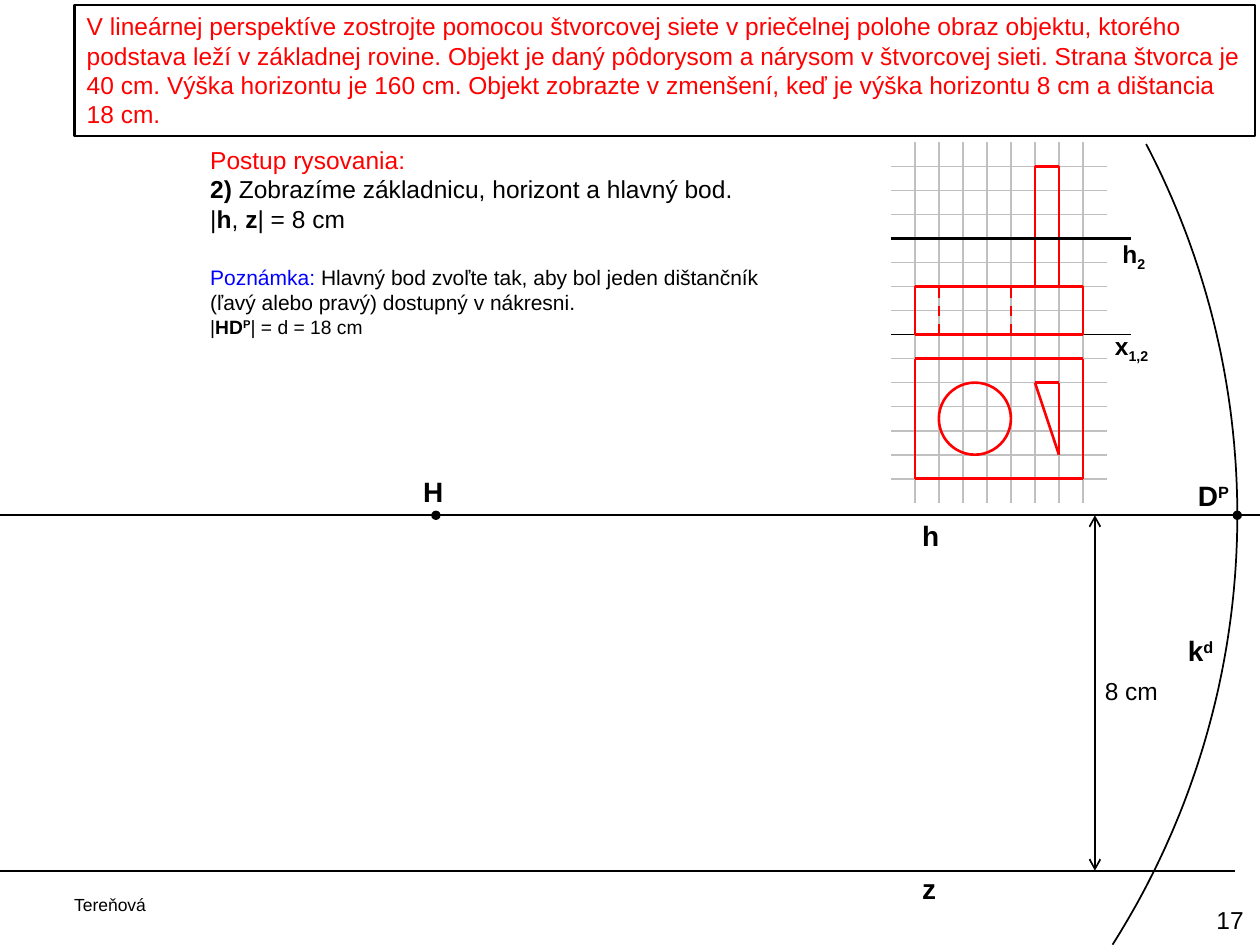
from itertools import pairwise
from math import cos, radians, sin
from typing import NamedTuple

from lxml import etree
from pptx import Presentation
from pptx import util as u
from pptx.dml.color import RGBColor
from pptx.enum import dml, shapes, text
from pptx.oxml import ns

BLACK, RED, BLUE, GREY = "000000", "FF0000", "0000FF", "C0C0C0"
RAISED, LOWERED = 30, -25

# Perspective: main point H, horizon, ground line and distance circle
H_X, HORIZON, GROUND, DISTANCE = 3.46, 4.09, 6.91, 6.36
# Square grid: top left corner and side of one cell
GRID_X, GRID_Y = 7.07, 1.13
CELL = (3.99 - GRID_Y) / 15


class Span(NamedTuple):
    text: str
    bold: bool = False
    color: str | None = None
    baseline: int = 0


class Line(NamedTuple):
    spans: list[Span]
    size: float = 14
    color: str = BLACK


class Box(NamedTuple):
    left: float
    top: float
    width: float
    height: float
    lines: list[Line]
    wrap: bool = False


def rgb(value: str) -> RGBColor:
    return RGBColor.from_string(value)


def write(shape, box: Box) -> None:
    frame = shape.text_frame
    frame.word_wrap = box.wrap
    frame.auto_size = text.MSO_AUTO_SIZE.SHAPE_TO_FIT_TEXT
    for index, line in enumerate(box.lines):
        para = frame.add_paragraph() if index else frame.paragraphs[0]
        para.alignment = text.PP_ALIGN.LEFT
        para.font.name = "Arial"
        para.font.size = u.Pt(line.size)
        para.font.color.rgb = rgb(line.color)
        for span in line.spans:
            run = para.add_run()
            run.text = span.text
            run.font.bold = span.bold
            if span.color:
                run.font.color.rgb = rgb(span.color)
            if span.baseline:
                run.font._element.set("baseline", str(span.baseline * 1000))


def add_text(page, box: Box):
    shape = page.shapes.add_textbox(*map(u.Inches, box[:4]))
    write(shape, box)
    return shape


def add_line(page, start, end, color=BLACK, width=1.0, dashed=False):
    line = page.shapes.add_connector(
        shapes.MSO_CONNECTOR.STRAIGHT, *map(u.Inches, (*start, *end)))
    line.line.color.rgb = rgb(color)
    line.line.width = u.Pt(width)
    if dashed:
        line.line.dash_style = dml.MSO_LINE.DASH
    etree.SubElement(line._element.spPr, ns.qn("a:effectLst"))
    return line


def add_circle(page, x: float, y: float, radius: float, color: str,
               width: float, filled: bool) -> None:
    circle = page.shapes.add_shape(
        shapes.MSO_SHAPE.OVAL,
        *map(u.Inches, (x - radius, y - radius, 2 * radius, 2 * radius)))
    circle.shadow.inherit = False
    circle.line.color.rgb = rgb(color)
    circle.line.width = u.Pt(width)
    if filled:
        circle.fill.solid()
        circle.fill.fore_color.rgb = rgb(color)
    else:
        circle.fill.background()


def add_distance_arc(page) -> None:
    angles = [radians(-27.6 + 60 * step / 120) for step in range(121)]
    points = [(u.Inches(H_X + DISTANCE * cos(angle)),
               u.Inches(HORIZON + DISTANCE * sin(angle))) for angle in angles]
    builder = page.shapes.build_freeform(*points[0])
    builder.add_line_segments(points[1:], close=False)
    arc = builder.convert_to_shape()
    arc.shadow.inherit = False
    arc.fill.background()
    arc.line.color.rgb = rgb(BLACK)
    arc.line.width = u.Pt(1)


def cell(column: float, row: float) -> tuple[float, float]:
    return GRID_X + CELL * column, GRID_Y + CELL * row


def add_views(page) -> None:
    # Grid with the base line x in row 8
    for row in range(1, 15):
        is_base = row == 8
        add_line(page, cell(0, row), cell(10 if is_base else 9, row),
                 BLACK if is_base else GREY)
    for column in range(1, 9):
        add_line(page, cell(column, 0), cell(column, 15), GREY)

    # Front view, tower, plan and triangle, as corners in grid units
    outlines = [
        [(1, 8), (1, 6), (8, 6), (8, 8), (1, 8)],
        [(6, 6), (6, 1), (7, 1), (7, 6)],
        [(1, 9), (1, 14), (8, 14), (8, 9), (1, 9)],
        [(7, 13), (7, 10), (6, 10), (7, 13)],
    ]
    for corners in outlines:
        for start, end in pairwise(corners):
            add_line(page, cell(*start), cell(*end), RED, 1.5)
    for column in (2, 5):
        add_line(page, cell(column, 8), cell(column, 6), RED, 1.5, dashed=True)
    add_circle(page, *cell(3.5, 11.5), 1.5 * CELL, RED, 1.5, filled=False)

    # Horizon in the front view
    add_line(page, cell(0, 4), cell(10, 4), BLACK, 1.5)


def label(left, top, width, name, index="", baseline=RAISED, size=16) -> Box:
    spans = [Span(name, True)]
    if index:
        spans.append(Span(index, True, baseline=baseline))
    return Box(left, top, width, 0.37 if size == 16 else 0.34, [Line(spans, size)])


TASK = Box(0.59, 0.04, 9.37, 1.04, [Line([Span(
    "V lineárnej perspektíve zostrojte pomocou štvorcovej siete v priečelnej "
    "polohe obraz objektu, ktorého podstava leží v základnej rovine. Objekt je "
    "daný pôdorysom a nárysom v štvorcovej sieti. Strana štvorca je 40 cm. "
    "Výška horizontu je 160 cm. Objekt zobrazte v zmenšení, keď je výška "
    "horizontu 8 cm a dištancia 18 cm.")], color=RED)], wrap=True)

TEXTS = [
    Box(1.57, 2.05, 4.68, 0.69, [
        Line([Span("Poznámka:", color=BLUE),
              Span(" Hlavný bod zvoľte tak, aby bol jeden dištančník (ľavý "
                   "alebo pravý) dostupný v nákresni.")], 12),
        Line([Span("|"), Span("HD", True), Span("P", True, baseline=RAISED),
              Span("| = d = 18 cm")], 11),
    ], wrap=True),
    Box(1.57, 1.1, 4.4, 0.81, [
        Line([Span("Postup rysovania:")], color=RED),
        Line([Span("2)", True),
              Span(" Zobrazíme základnicu, horizont a hlavný bod.")]),
        Line([Span("|"), Span("h", True), Span(", "), Span("z", True),
              Span("| = 8 cm")]),
    ], wrap=True),
    Box(8.67, 5.32, 0.63, 0.34, [Line([Span("8 cm")])]),
    label(9.33, 4.98, 0.42, "k", "d"),
    label(7.22, 4.07, 0.34, "h"),
    label(3.26, 3.72, 0.36, "H"),
    label(9.41, 3.75, 0.46, "D", "P"),
    label(7.22, 6.87, 0.31, "z"),
    label(8.75, 2.58, 0.49, "x", "1,2", LOWERED, 14),
    label(8.81, 1.85, 0.39, "h", "2", LOWERED, 14),
    Box(0.49, 7.05, 0.79, 0.27, [Line([Span("Tereňová")], 10)]),
]
PAGE_NUMBER = Box(9.53, 7.13, 0.44, 0.34, [Line([Span("17")])])


def main() -> None:
    deck = Presentation()
    deck.slide_width, deck.slide_height = u.Inches(10), u.Inches(7.5)
    page = deck.slides.add_slide(deck.slide_layouts[6])

    # Framed task
    frame = add_text(page, TASK)
    frame.line.color.rgb = rgb(BLACK)
    frame.line.width = u.Pt(1.5)

    # Perspective construction
    add_line(page, (0, HORIZON), (10, HORIZON))
    add_line(page, (0, GROUND), (9.8, GROUND))
    add_distance_arc(page)
    height = add_line(page, (8.69, HORIZON), (8.69, GROUND))
    for end in ("a:headEnd", "a:tailEnd"):
        etree.SubElement(height.line._get_or_add_ln(), ns.qn(end), type="arrow")
    for x in (H_X, H_X + DISTANCE):
        add_circle(page, x, HORIZON, 0.03, BLACK, 1, filled=True)

    add_views(page)

    # Texts and labels
    for box in TEXTS:
        add_text(page, box)
    number = add_text(page, PAGE_NUMBER).text_frame
    number.vertical_anchor = text.MSO_ANCHOR.MIDDLE
    number.paragraphs[0].alignment = text.PP_ALIGN.RIGHT

    deck.save("out.pptx")


if __name__ == "__main__":
    main()
